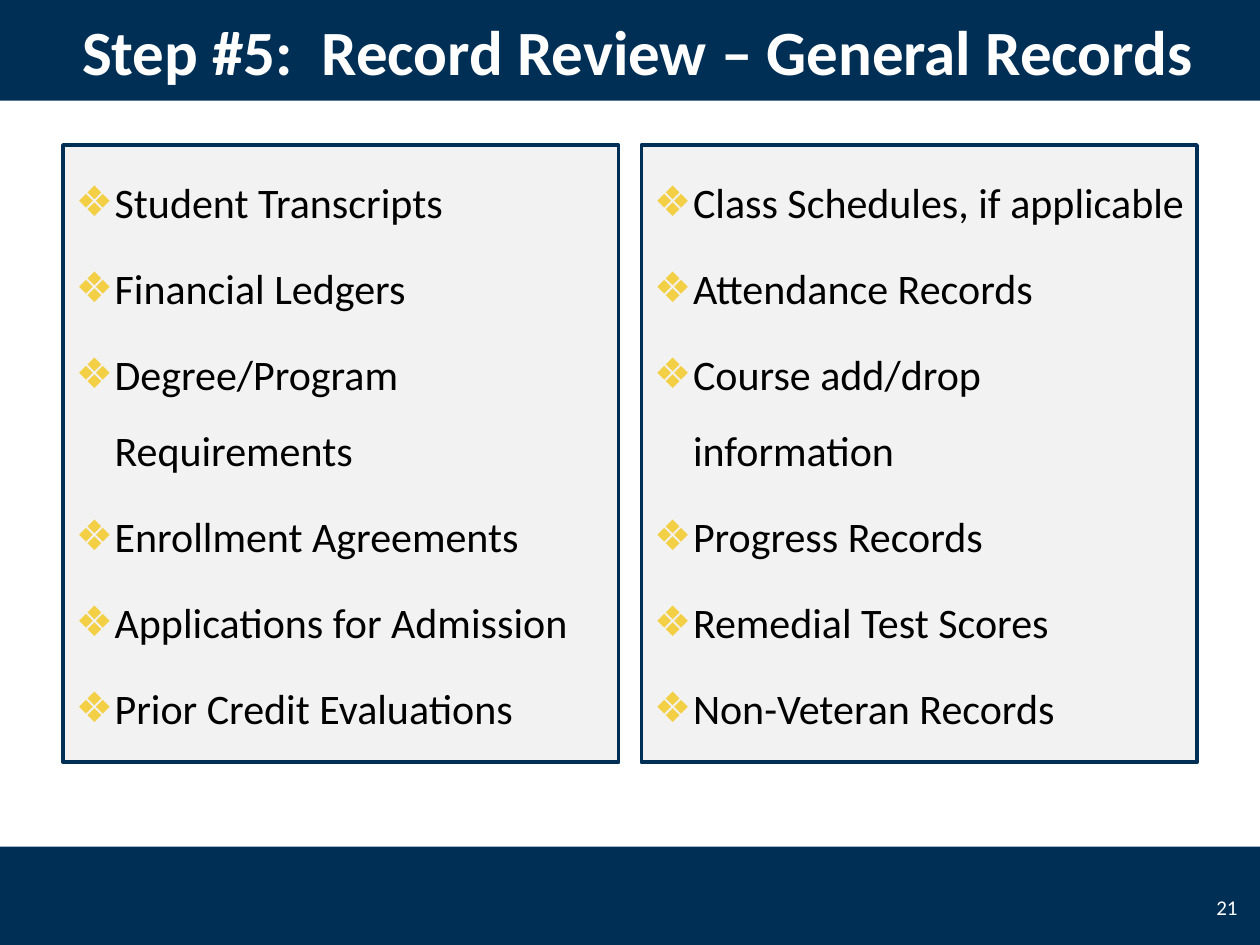
from lxml.etree import SubElement
from pptx import Presentation
from pptx.dml.color import RGBColor
from pptx.enum.shapes import MSO_SHAPE
from pptx.enum.text import MSO_ANCHOR, MSO_AUTO_SIZE, PP_ALIGN
from pptx.oxml.ns import qn
from pptx.util import Inches, Pt

NAVY = RGBColor(0x00, 0x2F, 0x56)
GOLD = RGBColor(0xF3, 0xCF, 0x45)
PANEL_GRAY = RGBColor(0xF2, 0xF2, 0xF2)
WHITE = RGBColor(0xFF, 0xFF, 0xFF)
BLACK = RGBColor(0x00, 0x00, 0x00)

TITLE = "Step #5:  Record Review – General Records"
RECORD_COLUMNS = [
    ["Student Transcripts", "Financial Ledgers", "Degree/Program Requirements",
     "Enrollment Agreements", "Applications for Admission",
     "Prior Credit Evaluations"],
    ["Class Schedules, if applicable", "Attendance Records",
     "Course add/drop information", "Progress Records",
     "Remedial Test Scores", "Non-Veteran Records"],
]
MARGIN, GAP, PANEL_WIDTH = 0.5, 0.18, 4.41


def place(shape, left, top, width, height):
    shape.left, shape.top = Inches(left), Inches(top)
    shape.width, shape.height = Inches(width), Inches(height)


def style_text(para, size, color, bold=False):
    for span in para.runs:
        span.font.name = "Calibri"
        span.font.size = Pt(size)
        span.font.bold = bold
        span.font.color.rgb = color


def add_band(slide, top):
    """Add a full-width navy band behind the title and lists."""
    band = slide.shapes.add_shape(
        MSO_SHAPE.RECTANGLE, 0, Inches(top), Inches(10), Inches(0.8))
    band.shadow.inherit = False
    band.fill.solid()
    band.fill.fore_color.rgb = NAVY
    band.line.fill.background()
    slide.shapes.title.element.addprevious(band.element)


def set_title(title):
    place(title, 0.2, 0, 9.72, 0.8)
    frame = title.text_frame
    frame.text = TITLE
    frame.auto_size = MSO_AUTO_SIZE.NONE
    frame.vertical_anchor = MSO_ANCHOR.MIDDLE
    frame.paragraphs[0].alignment = PP_ALIGN.CENTER
    style_text(frame.paragraphs[0], 36, WHITE, bold=True)


def add_bullet(para):
    properties = para._p.get_or_add_pPr()
    properties.set("marL", str(Inches(0.31)))
    properties.set("indent", str(Inches(-0.31)))
    color = SubElement(properties, qn("a:buClr"))
    SubElement(color, qn("a:srgbClr"), val=str(GOLD))
    SubElement(properties, qn("a:buChar"), char="❖")


def fill_panel(panel, left, records):
    place(panel, left, 1.15, PANEL_WIDTH, 4.9)
    panel.fill.solid()
    panel.fill.fore_color.rgb = PANEL_GRAY
    panel.line.color.rgb = NAVY
    panel.line.width = Pt(2)
    frame = panel.text_frame
    frame.text = "\n".join(records)
    frame.auto_size = MSO_AUTO_SIZE.NONE
    frame.vertical_anchor = MSO_ANCHOR.TOP
    for para in frame.paragraphs:
        add_bullet(para)
        para.line_spacing = 1.5
        para.space_before = Pt(0)
        para.space_after = Pt(6)
        style_text(para, 24, BLACK)


def add_page_number(slide, number):
    box = slide.shapes.add_textbox(
        Inches(9.5), Inches(7), Inches(0.42), Inches(0.4))
    frame = box.text_frame
    frame.word_wrap = True
    frame.vertical_anchor = MSO_ANCHOR.MIDDLE
    frame.text = number
    frame.paragraphs[0].alignment = PP_ALIGN.RIGHT
    style_text(frame.paragraphs[0], 12, WHITE)


def main():
    deck = Presentation()
    deck.slide_width, deck.slide_height = Inches(10), Inches(7.5)
    slide = deck.slides.add_slide(deck.slide_layouts.get_by_name("Two Content"))
    for top in (6.72, 0):
        add_band(slide, top)
    set_title(slide.shapes.title)
    for column, records in enumerate(RECORD_COLUMNS):
        left = MARGIN + column * (PANEL_WIDTH + GAP)
        fill_panel(slide.placeholders[column + 1], left, records)
    add_page_number(slide, "21")
    deck.save("out.pptx")


if __name__ == "__main__":
    main()
